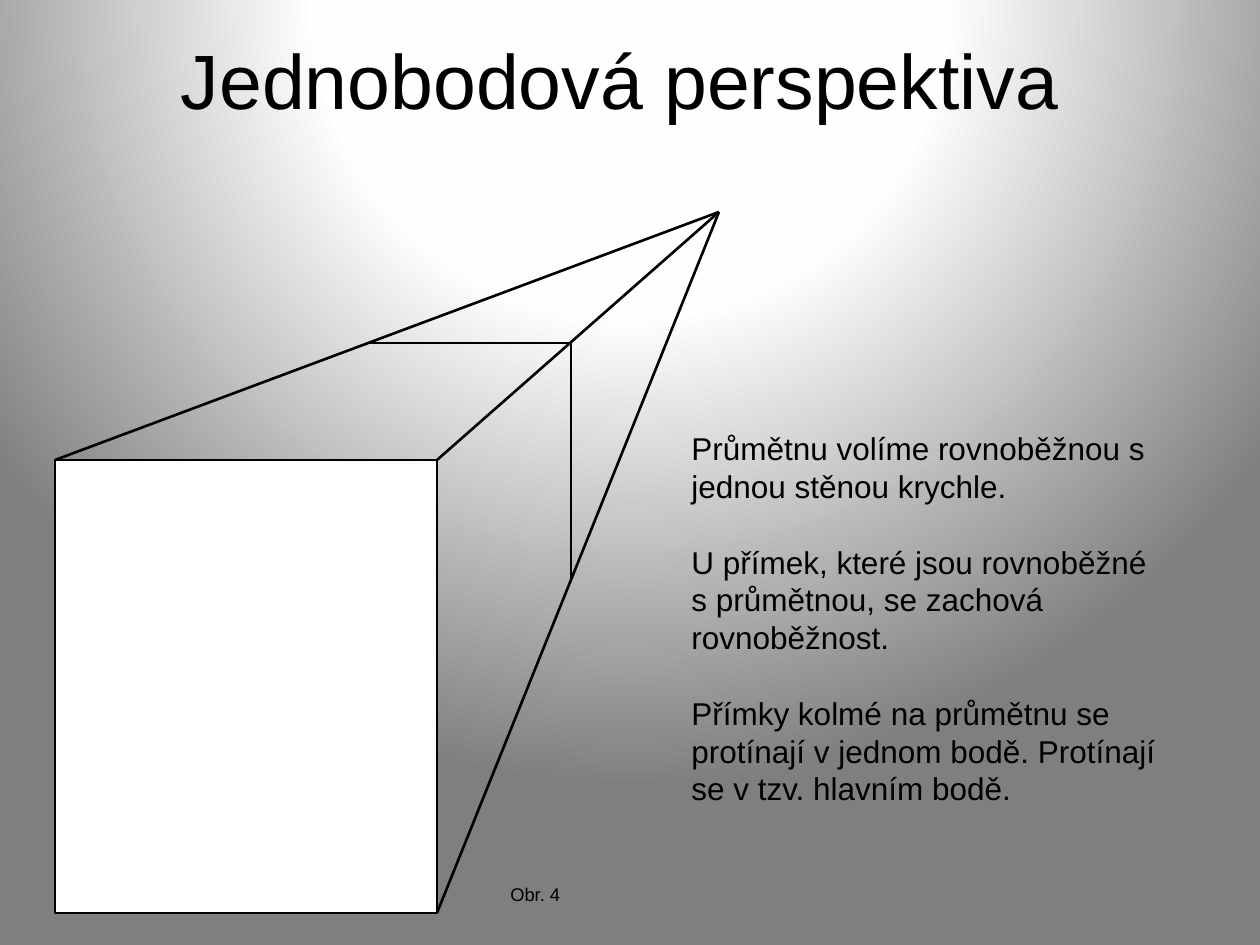
from lxml.etree import SubElement, fromstring
from pptx import Presentation
from pptx.dml.color import RGBColor
from pptx.enum.shapes import MSO_CONNECTOR, MSO_SHAPE
from pptx.enum.text import MSO_ANCHOR, PP_ALIGN
from pptx.oxml.ns import qn
from pptx.util import Emu, Pt

PIXELS_PER_INCH = 126
BLACK = RGBColor(0x00, 0x00, 0x00)
WHITE = RGBColor(0xFF, 0xFF, 0xFF)
NEAR_WHITE = RGBColor(0xFE, 0xFE, 0xFE)
GRAY = RGBColor(0x7F, 0x7F, 0x7F)
BACKGROUND_STOPS = [(0, WHITE), (40, NEAR_WHITE), (100, GRAY)]
NAMESPACE = "http://schemas.openxmlformats.org/drawingml/2006/main"
EXPLANATION = [
    "Průmětnu volíme rovnoběžnou s jednou stěnou krychle.",
    "U přímek, které jsou rovnoběžné s průmětnou, se zachová rovnoběžnost.",
    "Přímky kolmé na průmětnu se protínají v jednom bodě. "
    "Protínají se v tzv. hlavním bodě.",
]


def px(length):
    """Turn a length in pixels into EMU."""
    return Emu(round(length * 914400 / PIXELS_PER_INCH))


def set_format(target, values):
    """Set each attribute of the target from a dict of format values."""
    for name, value in values.items():
        setattr(target, name, value)


def set_font(paragraph, size):
    """Format the text of a paragraph."""
    set_format(paragraph.font, {"name": "Arial", "size": Pt(size)})
    paragraph.font.color.rgb = BLACK


def set_line(shape):
    """Give a shape or connector the drawing's outline."""
    shape.line.color.rgb = BLACK
    shape.line.width = Pt(1.5)


def fill_background(slide):
    """Fill the slide with a radial gradient centred above the top edge."""
    fill = slide.background.fill
    fill.solid()
    fill.fore_color.rgb = WHITE
    stops = "".join(
        f'<a:gs pos="{position * 1000}"><a:srgbClr val="{color}"/></a:gs>'
        for position, color in BACKGROUND_STOPS
    )
    gradient = fromstring(
        f'<a:gradFill xmlns:a="{NAMESPACE}" rotWithShape="1"><a:gsLst>{stops}</a:gsLst>'
        '<a:path path="circle"><a:fillToRect l="50000" t="-80000" r="50000" b="180000"/>'
        "</a:path></a:gradFill>"
    )
    solid = next(slide.element.iter(qn("a:solidFill")))
    solid.getparent().replace(solid, gradient)


def add_title(slide, left, top, width, height):
    """Place the slide title in its placeholder."""
    title = slide.shapes.title
    box = {"left": left, "top": top, "width": width, "height": height}
    set_format(title, {name: px(length) for name, length in box.items()})
    title.text_frame.text = "Jednobodová perspektiva"
    title.text_frame.vertical_anchor = MSO_ANCHOR.MIDDLE
    paragraph = title.text_frame.paragraphs[0]
    paragraph.alignment = PP_ALIGN.CENTER
    set_font(paragraph, 44)


def add_edge(slide, start, end):
    """Draw a straight line between two points."""
    edge = slide.shapes.add_connector(
        MSO_CONNECTOR.STRAIGHT, *(px(length) for length in (*start, *end))
    )
    set_line(edge)
    SubElement(edge.element.spPr, qn("a:effectLst"))


def add_cube(slide, left, top, width, height):
    """Draw a cube whose depth edges meet at the top right of the box."""
    face_top, face_width = top + 248, 382
    face_right, bottom = left + face_width, top + height
    face = slide.shapes.add_shape(
        MSO_SHAPE.RECTANGLE, px(left), px(face_top), px(face_width), px(bottom - face_top)
    )
    face.shadow.inherit = False
    face.fill.solid()
    face.fill.fore_color.rgb = WHITE
    set_line(face)

    vanishing_point = (left + width, top)
    for corner in [(left, face_top), (face_right, face_top), (face_right, bottom)]:
        add_edge(slide, corner, vanishing_point)

    back_corner = (left + 516, top + 131)
    add_edge(slide, (left + 313, top + 131), back_corner)
    add_edge(slide, back_corner, (left + 516, top + 370))


def add_text(slide, left, top, width, height, texts, size, wrap=True):
    """Place paragraphs separated by one line of space."""
    box = slide.shapes.add_textbox(px(left), px(top), px(width), px(height))
    box.text_frame.word_wrap = wrap
    box.text_frame.text = "\n".join(texts)
    pitch = Pt(size * 1.2)
    for index, paragraph in enumerate(box.text_frame.paragraphs):
        set_format(paragraph, {"line_spacing": pitch, "space_before": pitch if index else Pt(0)})
        set_font(paragraph, size)


def main():
    """Build and save the slide."""
    presentation = Presentation()
    set_format(presentation, {"slide_width": px(1260), "slide_height": px(945)})
    slide = presentation.slides.add_slide(presentation.slide_layouts[5])
    fill_background(slide)
    add_title(slide, 53, 0, 1134, 158)
    add_cube(slide, 55, 212, 664, 701)
    add_text(slide, 679, 423, 503, 394, EXPLANATION, 18)
    add_text(slide, 498, 877, 81, 35, ["Obr. 4"], 10.5, wrap=False)
    presentation.save("out.pptx")


if __name__ == "__main__":
    main()
